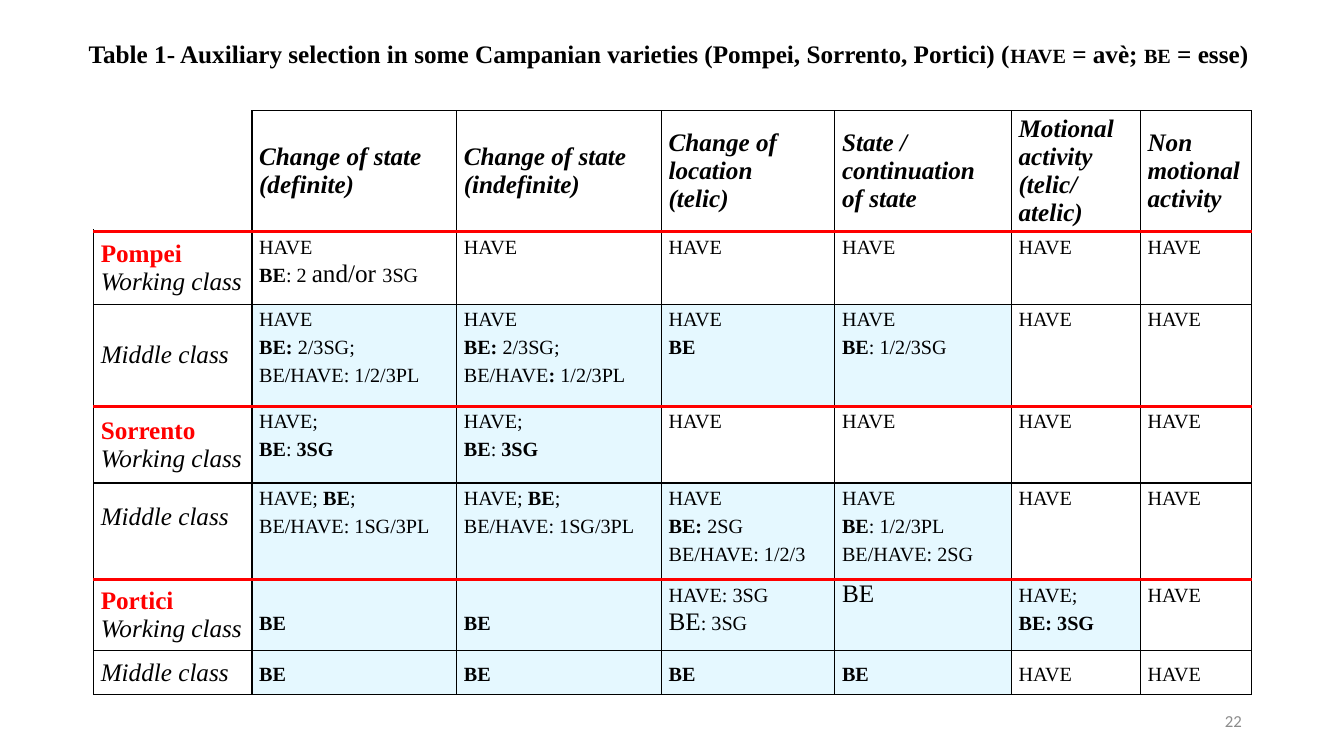
from lxml.etree import SubElement
from pptx import Presentation
from pptx.dml.color import RGBColor
from pptx.enum.shapes import MSO_SHAPE
from pptx.enum.text import MSO_ANCHOR, MSO_AUTO_SIZE, PP_ALIGN
from pptx.oxml.ns import qn
from pptx.util import Cm, Pt

COLORS = {"black": "000000", "red": "FF0000", "blue": "E5F8FF", "white": "FFFFFF", "grey": "8C8C8C"}
SERIF = "Times New Roman"
COLUMN_WIDTHS = [3.99, 5.16, 5.16, 4.37, 4.45, 3.25, 2.79]
ROW_HEIGHTS = [2.62, 1.83, 2.57, 1.93, 2.44, 1.78, 1.12]
BLUE_COLUMNS = [[], [], [1, 2, 3, 4], [1, 2], [1, 2, 3, 4], [1, 2, 3, 4, 5], [1, 2, 3, 4]]
TITLE = [
    ("Table 1- Auxiliary selection in some Campanian varieties (Pompei, Sorrento, Portici) (", False),
    ("have", True), (" = avè; ", False), ("be", True), (" = esse)", False),
]
# Text between asterisks is bold
ROWS = [
    ["", "Change of state\n(definite)", "Change of state\n(indefinite)", "Change of location\n(telic)",
     "State / continuation\nof state", "Motional\nactivity\n(telic/atelic)", "Non\nmotional activity"],
    ["Pompei\nWorking class", "have\n*be*: 2 **and/or **3sg", "have", "have", "have", "have", "have"],
    ["Middle class", "have\n*be: *2/3sg;\nbe/have: 1/2/3pl", "have\n*be: *2/3sg;\nbe/have*: *1/2/3pl",
     "have\n*be*", "have\n*be*: 1/2/3sg", "have", "have"],
    ["Sorrento\nWorking class", "have;\n*be*: *3sg*", "have;\n*be*:* 3sg*", "have", "have", "have", "have"],
    ["Middle class", "have; *be*;\nbe/have: 1sg/3pl", "have; *be*;\nbe/have: 1sg/3pl",
     "have\n*be: *2sg\nbe/have: 1/2/3", "have\n*be*: 1/2/3pl\nbe/have: 2sg", "have", "have"],
    ["Portici\nWorking class", "*be*", "*be*", "have: 3sg\nBE: 3sg", "BE", "have;\n*be: 3sg*", "have"],
    ["Middle class", "*be*", "*be*", "*be*", "*be*", "have", "have"],
]


def add_span(para, text, bold=False, italic=False, small_caps=False, color="black", font=SERIF, size=18):
    span = para.add_run()
    span.text = text
    span.font.name = font
    span.font.size = Pt(size)
    span.font.bold = bold
    span.font.italic = italic
    span.font.color.rgb = RGBColor.from_string(COLORS[color])
    if small_caps:
        span.font._element.set("cap", "small")


def add_border(cell, side, color, width):
    line = SubElement(cell._tc.get_or_add_tcPr(), qn(f"a:{side}"), w=str(Pt(width)))
    SubElement(SubElement(line, qn("a:solidFill")), qn("a:srgbClr"), val=COLORS[color])


deck = Presentation()
deck.slide_width, deck.slide_height = Cm(33.87), Cm(19.05)
page = deck.slides.add_slide(deck.slide_layouts[5])

title = page.shapes.title
title.left, title.top, title.width, title.height = Cm(1.98), Cm(0.84), Cm(30.2), Cm(1.02)
title.text_frame.auto_size = MSO_AUTO_SIZE.NONE
title.text_frame.vertical_anchor = MSO_ANCHOR.TOP
title.text_frame.word_wrap = True
para = title.text_frame.paragraphs[0]
para.alignment = PP_ALIGN.JUSTIFY
for text, small_caps in TITLE:
    add_span(para, text, bold=True, small_caps=small_caps)

number = page.shapes.add_textbox(Cm(23.93), Cm(17.65), Cm(7.62), Cm(1.02))
number.text_frame.word_wrap = True
number.text_frame.vertical_anchor = MSO_ANCHOR.MIDDLE
para = number.text_frame.paragraphs[0]
para.alignment = PP_ALIGN.RIGHT
add_span(para, "22", color="grey", font="Calibri", size=12)

frame = page.shapes.add_table(len(ROWS), len(COLUMN_WIDTHS), Cm(2.36), Cm(2.79),
                              Cm(sum(COLUMN_WIDTHS)), Cm(sum(ROW_HEIGHTS)))
table = frame.table
table.first_row = table.horz_banding = False
for column, width in zip(table.columns, COLUMN_WIDTHS):
    column.width = Cm(width)
for row, height in zip(table.rows, ROW_HEIGHTS):
    row.height = Cm(height)

for r, row in enumerate(ROWS):
    for c, content in enumerate(row):
        cell = table.cell(r, c)
        cell.margin_left = cell.margin_right = Cm(0.18)
        cell.margin_top = Pt(20) if r == 5 and c in (1, 2) else 0
        cell.margin_bottom = Pt(20) if r == 4 and c == 0 else 0
        centred = r in (0, 6) or c == 0
        cell.vertical_anchor = MSO_ANCHOR.MIDDLE if centred else MSO_ANCHOR.TOP

        red_top, red_bottom = r in (1, 3, 5), r in (0, 2, 4)
        for side, red in [("lnL", False), ("lnR", False), ("lnT", red_top), ("lnB", red_bottom)]:
            add_border(cell, side, "red" if red else "black", 2.25 if red else 1)
        if c in BLUE_COLUMNS[r]:
            cell.fill.solid()
            cell.fill.fore_color.rgb = RGBColor.from_string(COLORS["blue"])
        else:
            cell.fill.background()

        for i, line in enumerate(content.split("\n") if content else []):
            para = cell.text_frame.add_paragraph() if i else cell.text_frame.paragraphs[0]
            if r == 0:
                add_span(para, line, bold=True, italic=True)
            elif c == 0:
                city = not line.endswith("class")
                add_span(para, line, bold=city, italic=not city, color="red" if city else "black")
            else:
                for k, piece in enumerate(line.split("*")):
                    if piece:
                        add_span(para, piece, bold=k % 2 == 1, small_caps=piece != "and/or ")

corner = page.shapes.add_shape(MSO_SHAPE.RECTANGLE, Cm(1.98), Cm(2.64), Cm(4.32), Cm(3.12))
corner.shadow.inherit = False
corner.fill.solid()
corner.fill.fore_color.rgb = RGBColor.from_string(COLORS["white"])
corner.line.color.rgb = RGBColor.from_string(COLORS["white"])
corner.line.width = Pt(1)

deck.save("out.pptx")
